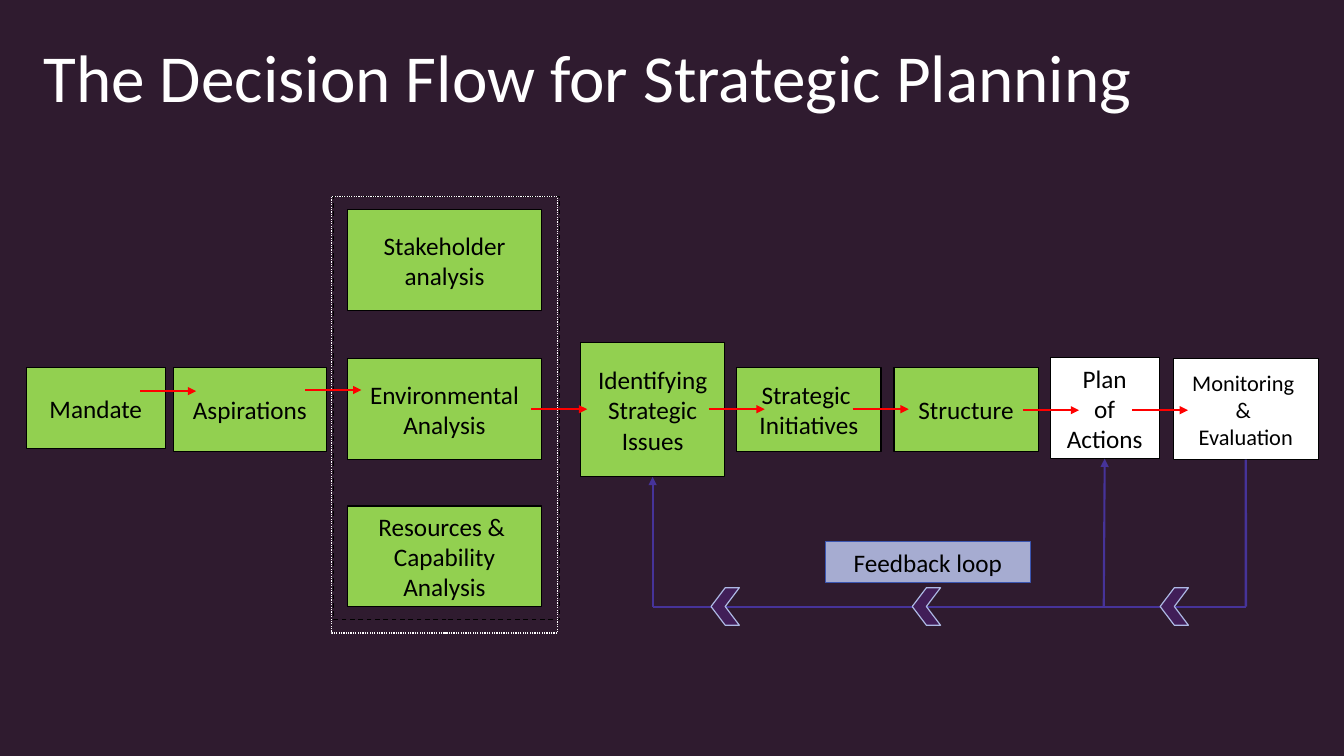
from pptx import Presentation
from pptx.dml.color import RGBColor
from pptx.enum import dml, shapes, text
from pptx.oxml.ns import qn
from pptx.util import Pt
from lxml import etree

BACKGROUND = RGBColor(0x2F, 0x1B, 0x2F)
GREEN = RGBColor(0x92, 0xD0, 0x50)
WHITE = RGBColor(0xFF, 0xFF, 0xFF)
BLACK = RGBColor(0, 0, 0)
RED = RGBColor(0xFF, 0, 0)
LOOP = RGBColor(0x46, 0x33, 0x99)
LABEL_FILL = RGBColor(0xA6, 0xAC, 0xD1)
LABEL_LINE = RGBColor(0x3B, 0x56, 0xB1)
CHEVRON_FILL = RGBColor(0x41, 0x1E, 0x58)
CHEVRON_LINE = RGBColor(0xAD, 0xB9, 0xE4)
FONT = "Calibri"

presentation = Presentation()
presentation.slide_width, presentation.slide_height = Pt(960), Pt(540)
slide = presentation.slides.add_slide(presentation.slide_layouts[5])
slide.background.fill.solid()
slide.background.fill.fore_color.rgb = BACKGROUND


def add_box(kind, place, fill, line, label="", size=18, weight=0.85):
    shape = slide.shapes.add_shape(kind, *map(Pt, place))
    shape.shadow.inherit = False
    if fill is None:
        shape.fill.background()
    else:
        shape.fill.solid()
        shape.fill.fore_color.rgb = fill
    shape.line.color.rgb = line
    shape.line.width = Pt(weight)
    if label:
        shape.text_frame.text = label
        shape.text_frame.word_wrap = True
        shape.text_frame.vertical_anchor = text.MSO_ANCHOR.MIDDLE
        for paragraph in shape.text_frame.paragraphs:
            paragraph.alignment = text.PP_ALIGN.CENTER
            for name, value in {"name": FONT, "size": Pt(size)}.items():
                setattr(paragraph.font, name, value)
            paragraph.font.color.rgb = BLACK
    return shape


def add_line(start, end, color, weight=1.5, arrow=True):
    connector = slide.shapes.add_connector(
        shapes.MSO_CONNECTOR.STRAIGHT, *map(Pt, (*start, *end)))
    connector.line.color.rgb = color
    connector.line.width = Pt(weight)
    if arrow:
        etree.SubElement(connector.line._get_or_add_ln(), qn("a:tailEnd"), type="triangle")
    etree.SubElement(connector._element.spPr, qn("a:effectLst"))
    return connector


# Title
title = slide.shapes.title
for name, value in {"left": 23.8, "top": 21.6, "width": 918, "height": 65.5}.items():
    setattr(title, name, Pt(value))
title.text_frame.text = "The Decision Flow for Strategic Planning"
for name, value in {"auto_size": text.MSO_AUTO_SIZE.NONE, "word_wrap": True,
                    "vertical_anchor": text.MSO_ANCHOR.TOP}.items():
    setattr(title.text_frame, name, value)
heading = title.text_frame.paragraphs[0]
heading.alignment = text.PP_ALIGN.LEFT
for name, value in {"name": FONT, "size": Pt(48)}.items():
    setattr(heading.font, name, value)
heading.font.color.rgb = WHITE

# Planning steps
steps = [
    ("Mandate", (18.7, 262.8, 99.4, 57.6), GREEN, 18),
    ("Aspirations", (123.8, 262.8, 109.4, 59.8), GREEN, 18),
    ("Stakeholder analysis", (248.4, 149.8, 138.2, 72), GREEN, 18),
    ("Environmental Analysis", (248.4, 256.3, 138.2, 72), GREEN, 18),
    ("Resources & \nCapability Analysis", (248.4, 361.4, 138.2, 72), GREEN, 18),
    ("Identifying Strategic Issues", (414.7, 244.8, 103, 95.8), GREEN, 18),
    ("Strategic  Initiatives", (526.3, 262.8, 103, 59.8), GREEN, 18),
    ("Structure", (638.6, 262.8, 103, 59.8), GREEN, 18),
    ("Plan\nof\nActions", (750.2, 255.6, 77.8, 72), WHITE, 18),
    ("Monitoring \n& \nEvaluation", (838, 256.3, 103.7, 72), WHITE, 16),
]
boxes = [add_box(shapes.MSO_SHAPE.RECTANGLE, place, fill, BLACK, label, size)
         for label, place, fill, size in steps]
issues, plan, monitoring = boxes[5], boxes[8], boxes[9]

# Frames around the three analyses
for place, color, dash in [
    ((238.3, 140.4, 161.3, 302.4), BLACK, dml.MSO_LINE.DASH),
    ((236.9, 140.4, 161.3, 311.8), WHITE, dml.MSO_LINE.ROUND_DOT),
]:
    frame = add_box(shapes.MSO_SHAPE.RECTANGLE, place, None, color)
    frame.line.dash_style = dash

# Feedback loop
LOOP_Y = 433.4
add_line((889.9, 328.3), (889.9, LOOP_Y), LOOP, 1.75, False).begin_connect(monitoring, 2)
add_line((889.9, LOOP_Y), (466.2, LOOP_Y), LOOP, 1.75, False)
add_line((466.2, LOOP_Y), (466.2, 340.6), LOOP).end_connect(issues, 2)
add_line((788.4, LOOP_Y), (789.1, 327.6), LOOP).end_connect(plan, 2)
add_box(shapes.MSO_SHAPE.RECTANGLE, (589.7, 386.9, 146.2, 29.1),
        LABEL_FILL, LABEL_LINE, "Feedback loop", weight=0.75)
for left in (828.7, 651.6, 507.9):
    chevron = add_box(shapes.MSO_SHAPE.CHEVRON, (left, 419.8, 20.2, 26.8),
                      CHEVRON_FILL, CHEVRON_LINE)
    chevron.rotation = 180

# Arrows between the steps
for left, y in [(100.1, 279.4), (218.2, 278.6), (379.4, 292.3), (506.2, 292.3),
                (609.1, 292.3), (730.8, 293), (808.6, 293)]:
    add_line((left, y), (left + 40, y), RED)

presentation.save("out.pptx")
